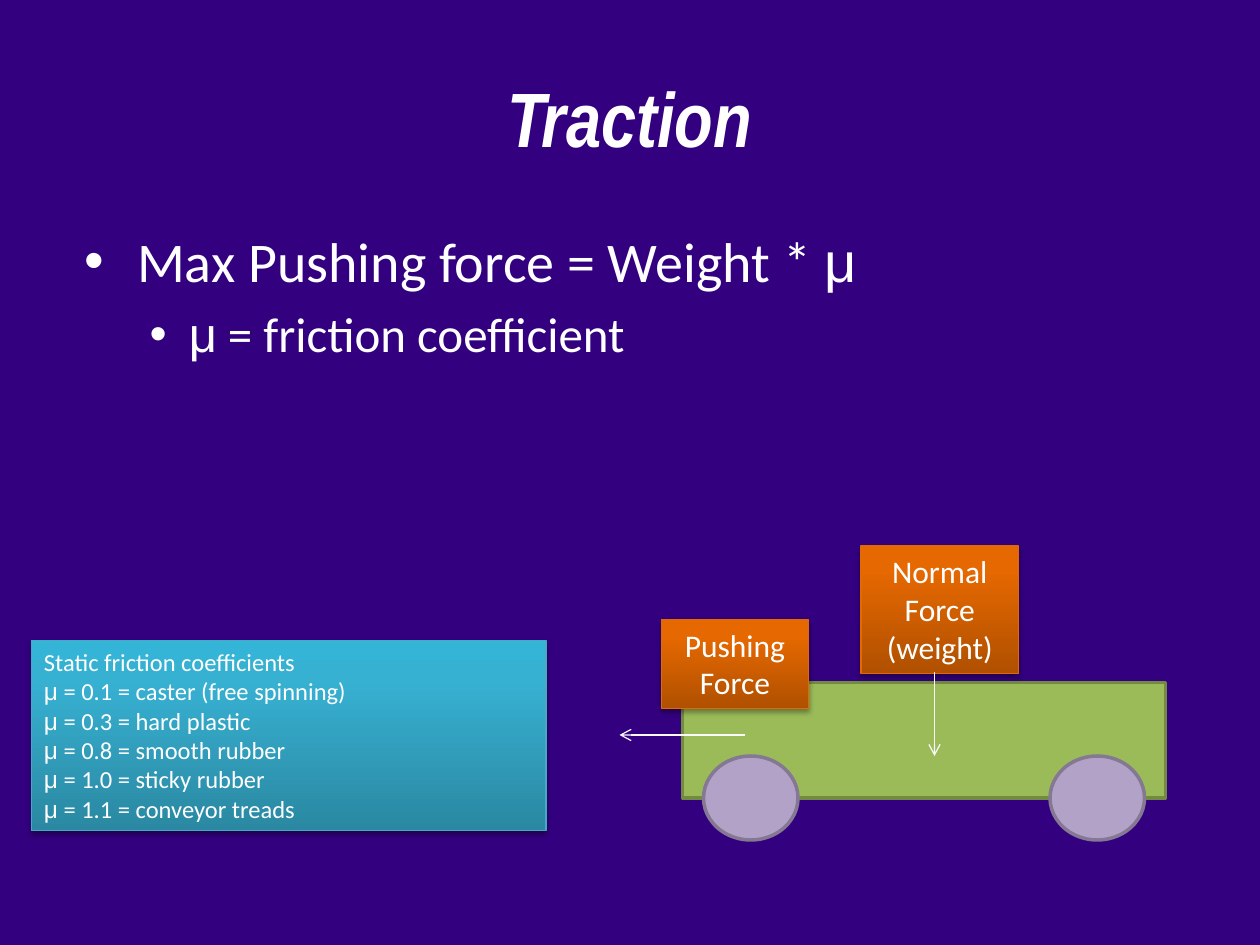
from copy import deepcopy

from lxml import etree
from pptx import Presentation
from pptx import util as u
from pptx.dml.color import RGBColor
from pptx.enum import shapes, text
from pptx.oxml import ns

Pt = u.Pt
WHITE = RGBColor(0xFF, 0xFF, 0xFF)
PURPLE = RGBColor(0x33, 0x00, 0x80)
GREEN, GREEN_EDGE = RGBColor(0x9B, 0xBB, 0x59), RGBColor(0x73, 0x8A, 0x42)
LILAC, LILAC_EDGE = RGBColor(0xB2, 0xA2, 0xC7), RGBColor(0x84, 0x78, 0x93)
ARROW = RGBColor(0xF9, 0xF9, 0xF9)
ORANGE_EDGE, TEAL_EDGE = RGBColor(0xE3, 0x69, 0x03), RGBColor(0x46, 0xAA, 0xC5)
ORANGE = [(0, RGBColor(0xB0, 0x50, 0x00)), (0.8, RGBColor(0xE5, 0x68, 0x00)),
          (1, RGBColor(0xE6, 0x68, 0x00))]
TEAL = [(0, RGBColor(0x2A, 0x88, 0xA2)), (0.8, RGBColor(0x37, 0xB1, 0xD2)),
        (1, RGBColor(0x34, 0xB4, 0xD6))]

# Content: positions are left, top, width, height
TITLE = "Traction"
BULLETS = [  # text, size, left margin, indent
    ("Max Pushing force = Weight * μ", 32, 35.3, -30.2),
    ("μ = friction coefficient", 28, 64.8, -22.3),
]
COEFFICIENTS = [("0.1", "caster (free spinning)"), ("0.3", "hard plastic"),
                ("0.8", "smooth rubber"), ("1.0", "sticky rubber"),
                ("1.1", "conveyor treads")]
TABLE_LINES = ["Static friction coefficients"] + [
    f"μ = {value} = {material}" for value, material in COEFFICIENTS]
LABELS = [  # lines, position, gradient, edge, size, alignment
    (["Normal Force (weight)"], (492, 312, 90, 72.7), ORANGE, ORANGE_EDGE, 18, "CENTER"),
    (TABLE_LINES, (18, 366, 294, 108.7), TEAL, TEAL_EDGE, 14, "LEFT"),
    (["Pushing Force"], (378, 354, 84, 51), ORANGE, ORANGE_EDGE, 18, "CENTER"),
]
BODY = (390, 390, 276, 66)
WHEEL_LEFTS, WHEEL_TOP, WHEEL_SIZE = (402, 600), 432, (54, 48)
ARROWS = [(534, 384, 534, 432), (426, 420, 354, 420)]

prs = Presentation()
prs.slide_width, prs.slide_height = Pt(720), Pt(540)
s = prs.slides.add_slide(prs.slide_layouts[6])
s.background.fill.solid()
s.background.fill.fore_color.rgb = PURPLE


def add_el(parent, tag, **attrs):
    el = etree.SubElement(parent, ns.qn(tag))
    for name, value in attrs.items():
        el.set(name, str(value))
    return el


def write(p, line, size, font="Calibri", **fmt):
    """Write a line, setting each μ in Arial."""
    before, mu, after = line.partition("μ")
    for part, face in ((before, font), (mu, "Arial"), (after, font)):
        if part:
            r = p.add_run()
            r.text = part
            r.font.color.rgb = WHITE
            for name, value in {"name": face, "size": Pt(size), **fmt}.items():
                setattr(r.font, name, value)


def add_text(box):
    tf = s.shapes.add_textbox(*map(Pt, box)).text_frame
    tf.word_wrap = True
    return tf


def add_shape(kind, box, edge, width, fill=None):
    sp = s.shapes.add_shape(kind, *map(Pt, box))
    sp.shadow.inherit = False
    sp.line.color.rgb, sp.line.width = edge, Pt(width)
    if fill is not None:
        sp.fill.solid()
        sp.fill.fore_color.rgb = fill
    return sp


def add_label(lines, box, gradient, edge, size, align):
    sp = add_shape(shapes.MSO_SHAPE.RECTANGLE, box, edge, 0.75)
    sp.fill.gradient()
    sp.fill.gradient_angle = 90
    stops = sp._element.spPr.find(".//" + ns.qn("a:gsLst"))
    stops.append(deepcopy(stops[-1]))
    for stop, (position, color) in zip(sp.fill.gradient_stops, gradient):
        stop.position, stop.color.rgb = position, color
    # Soft shadow below the label
    effects = sp._element.spPr.find(ns.qn("a:effectLst"))
    shadow = add_el(effects, "a:outerShdw", blurRad=Pt(3.1), dist=Pt(1.8),
                    dir=5400000, rotWithShape=0)
    add_el(add_el(shadow, "a:srgbClr", val="000000"), "a:alpha", val=35000)
    tf = sp.text_frame
    tf.word_wrap = True
    tf.vertical_anchor = text.MSO_ANCHOR.TOP
    tf.auto_size = text.MSO_AUTO_SIZE.SHAPE_TO_FIT_TEXT
    for i, line in enumerate(lines):
        p = tf.add_paragraph() if i else tf.paragraphs[0]
        p.alignment = text.PP_ALIGN[align]
        write(p, line, size)


# Title
tf = add_text((36, 21.6, 648, 90))
tf.vertical_anchor = text.MSO_ANCHOR.MIDDLE
tf.paragraphs[0].alignment = text.PP_ALIGN.CENTER
write(tf.paragraphs[0], TITLE, 44, "Arial Narrow", bold=True, italic=True)

# Bullets
tf = add_text((36, 126, 648, 356.4))
for level, (line, size, margin, indent) in enumerate(BULLETS):
    p = tf.add_paragraph() if level else tf.paragraphs[0]
    p.level, p.space_before = level, Pt(size * 0.2)
    pPr = p._p.get_or_add_pPr()
    pPr.set("marL", str(Pt(margin)))
    pPr.set("indent", str(Pt(indent)))
    add_el(pPr, "a:buFont", typeface="Arial")
    add_el(pPr, "a:buChar", char="•")
    write(p, line, size)

# Robot body, labels and wheels
add_shape(shapes.MSO_SHAPE.RECTANGLE, BODY, GREEN_EDGE, 2, GREEN)
for label in LABELS:
    add_label(*label)
for left in WHEEL_LEFTS:
    add_shape(shapes.MSO_SHAPE.OVAL, (left, WHEEL_TOP, *WHEEL_SIZE), LILAC_EDGE, 2, LILAC)

# Force arrows
for ends in ARROWS:
    c = s.shapes.add_connector(shapes.MSO_CONNECTOR.STRAIGHT, *map(Pt, ends))
    c.line.color.rgb, c.line.width = ARROW, Pt(0.75)
    add_el(c.line._get_or_add_ln(), "a:tailEnd", type="arrow")
    add_el(c._element.spPr, "a:effectLst")

prs.save("out.pptx")
